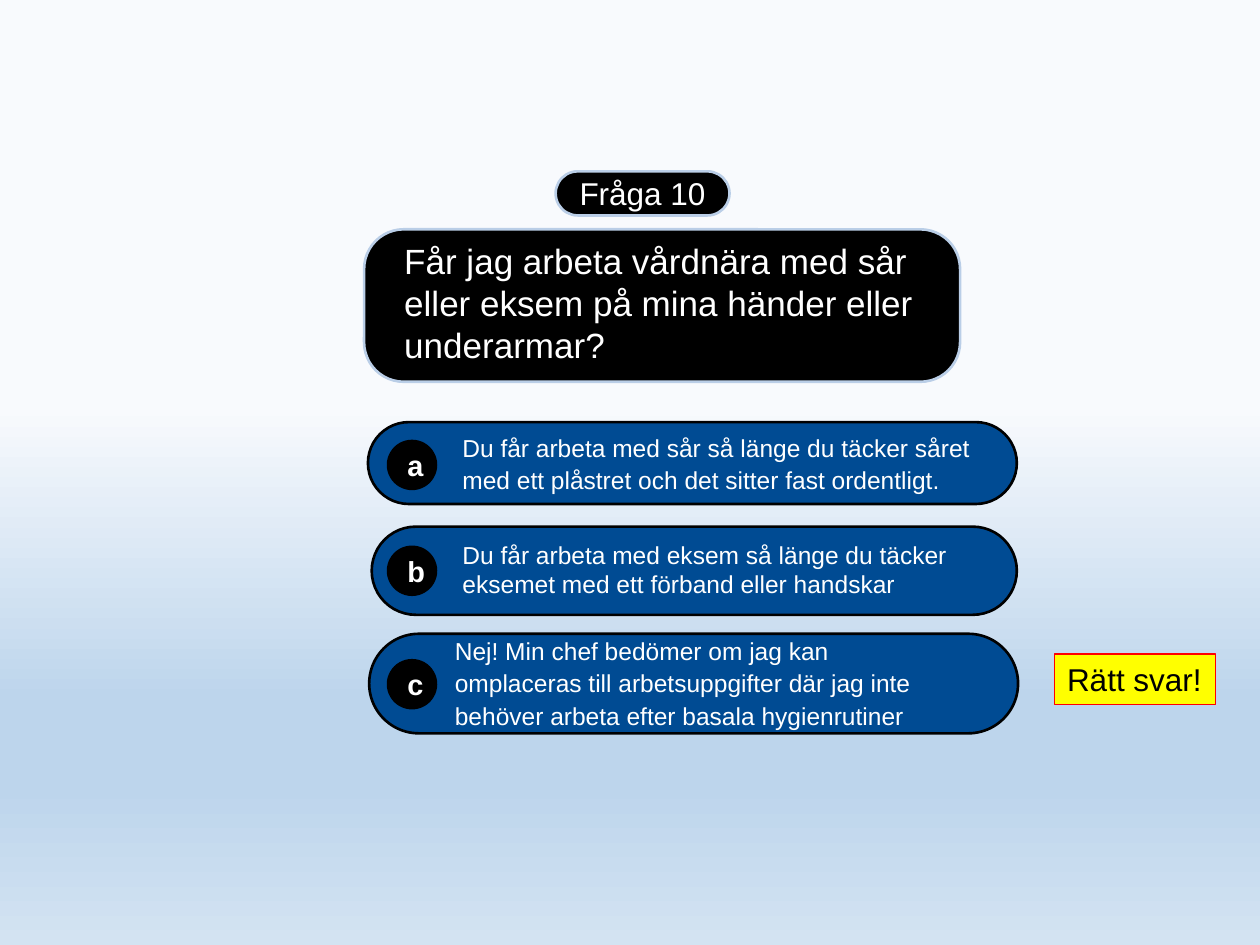
"""Build a quiz slide with one question, three answers and a marker for the right one."""
from lxml import etree
from pptx import Presentation
from pptx.dml.color import RGBColor
from pptx.enum.shapes import MSO_SHAPE
from pptx.enum.text import MSO_ANCHOR, MSO_AUTO_SIZE, PP_ALIGN
from pptx.oxml.ns import qn
from pptx.util import Inches, Pt

ROUNDED, OVAL, RECTANGLE = MSO_SHAPE.ROUNDED_RECTANGLE, MSO_SHAPE.OVAL, MSO_SHAPE.RECTANGLE
TOP, MIDDLE = MSO_ANCHOR.TOP, MSO_ANCHOR.MIDDLE
LEFT, CENTER = PP_ALIGN.LEFT, PP_ALIGN.CENTER
GROW = MSO_AUTO_SIZE.SHAPE_TO_FIT_TEXT

COLORS = {
    "black": "000000", "white": "FFFFFF", "answer": "004B93", "outline": "BACEE7",
    "yellow": "FFFF00", "red": "FF0000",
    "sky": "F8FAFD", "haze": "BDD5EC", "ground": "D3E3F2",
}
BACKGROUND_STOPS = [(43, "sky"), (74, "haze"), (83, "haze"), (100, "ground")]
ANSWERS = [
    ("a", (2.92, 3.35, 5.15, 0.65), 3.5, (3.67, 3.36, 4.17, 0.66), 1.1,
     "Du får arbeta med sår så länge du täcker såret med ett plåstret och det sitter fast ordentligt."),
    ("b", (2.95, 4.18, 5.12, 0.7), 4.34, (3.67, 4.22, 3.99, 0.64), 1.0,
     "Du får arbeta med eksem så länge du täcker eksemet med ett förband eller handskar"),
    ("c", (2.93, 5.03, 5.15, 0.79), 5.24, (3.61, 5.08, 4.05, 0.7), 1.1,
     "Nej! Min chef bedömer om jag kan omplaceras till arbetsuppgifter där jag inte "
     "behöver arbeta efter basala hygienrutiner"),
]


def add_panel(page, kind, place, fill, line, width=1.5, corner=None):
    panel = page.shapes.add_shape(kind, *map(Inches, place))
    panel.shadow.inherit = False
    panel.fill.solid()
    panel.fill.fore_color.rgb = RGBColor.from_string(COLORS[fill])
    panel.line.color.rgb = RGBColor.from_string(COLORS[line])
    panel.line.width = Pt(width)
    if corner is not None:
        panel.adjustments[0] = corner
    return panel


def write_text(box, text, size, color="white", bold=False, align=LEFT, anchor=MIDDLE,
               spacing=1.0, **frame_format):
    frame = box.text_frame
    frame_format = {"word_wrap": True, "vertical_anchor": anchor, **frame_format}
    for name, value in frame_format.items():
        setattr(frame, name, value)
    para = frame.paragraphs[0]
    para.alignment = align
    para.line_spacing = spacing
    span = para.add_run()
    span.text = text
    for name, value in {"name": "Arial", "size": Pt(size), "bold": bold}.items():
        setattr(span.font, name, value)
    span.font.color.rgb = RGBColor.from_string(COLORS[color])


deck = Presentation()
deck.slide_width, deck.slide_height = Inches(10), Inches(7.5)
page = deck.slides.add_slide(deck.slide_layouts[6])

backdrop = page.background.fill
backdrop.gradient()
backdrop.gradient_angle = 270
stop_list = next(page.element.iter(qn("a:gsLst")))
for stop in list(stop_list):
    stop_list.remove(stop)
for position, color in BACKGROUND_STOPS:
    stop = etree.SubElement(stop_list, qn("a:gs"), pos=str(position * 1000))
    etree.SubElement(stop, qn("a:srgbClr"), val=COLORS[color])

add_panel(page, ROUNDED, (2.89, 1.82, 4.73, 1.21), "black", "outline", corner=0.26)
heading = add_panel(page, ROUNDED, (4.41, 1.36, 1.38, 0.35), "black", "outline", corner=0.5)
write_text(heading, "Fråga 10", 18, align=CENTER)
question = page.shapes.add_textbox(*map(Inches, (3.11, 1.85, 4.41, 1.11)))
write_text(question, "Får jag arbeta vårdnära med sår eller eksem på mina händer eller underarmar?",
           20, anchor=TOP, auto_size=GROW)

answer_margins = {"margin_left": 0, "margin_top": 0,
                  "margin_right": Inches(0.07), "margin_bottom": Inches(0.04)}
for letter, bar_place, badge_top, text_place, spacing, answer in ANSWERS:
    add_panel(page, ROUNDED, bar_place, "answer", "black", corner=0.5)
    answer_box = page.shapes.add_textbox(*map(Inches, text_place))
    write_text(answer_box, answer, 14, spacing=spacing, **answer_margins)
    badge = add_panel(page, OVAL, (3.08, badge_top, 0.38, 0.38), "black", "black")
    write_text(badge, letter, 16.5, bold=True, align=CENTER)

verdict = add_panel(page, RECTANGLE, (8.37, 5.19, 1.28, 0.4), "yellow", "red", width=0.75)
write_text(verdict, "Rätt svar!", 18, color="black", anchor=TOP, word_wrap=False, auto_size=GROW)

deck.save("out.pptx")
